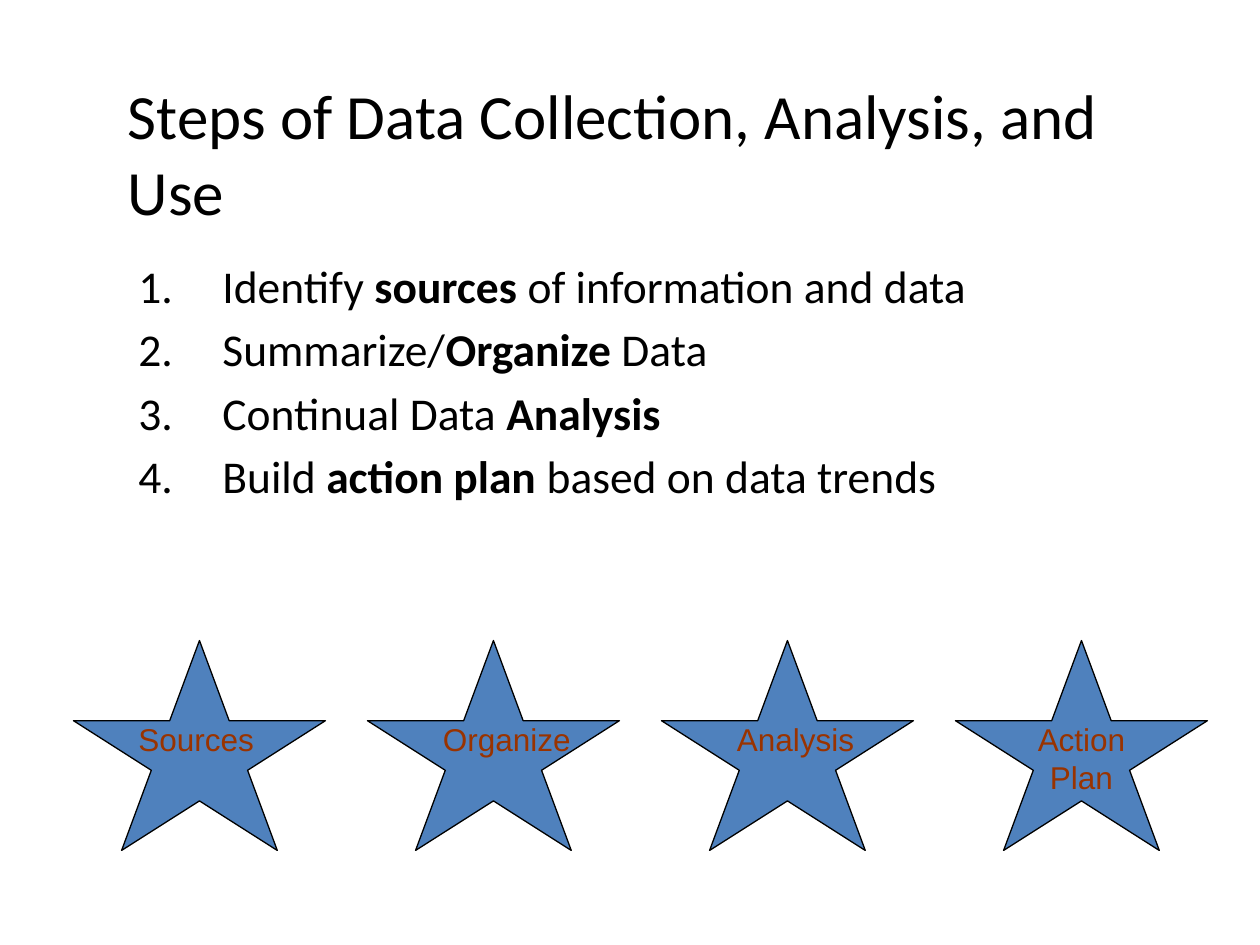
"""Build the slide on the steps of data collection, analysis, and use."""
from lxml import etree
from pptx import Presentation
from pptx import util as u
from pptx.dml.color import RGBColor
from pptx.enum import shapes, text
from pptx.oxml.ns import qn

BLACK = RGBColor(0x00, 0x00, 0x00)
BLUE = RGBColor(0x4F, 0x81, 0xBD)
RUST = RGBColor(0x99, 0x33, 0x00)


class Deck:
    heading_font = "Calibri"
    label_font = "Arial"

    def __init__(self, width, height):
        self.prs = Presentation()
        self.prs.slide_width, self.prs.slide_height = u.Pt(width), u.Pt(height)
        self.s = self.prs.slides.add_slide(self.prs.slide_layouts[6])

    def style(self, r, font, size, color, bold=False):
        r.font.name, r.font.size, r.font.bold = font, u.Pt(size), bold
        r.font.color.rgb = color

    def box(self, *bounds):
        tf = self.s.shapes.add_textbox(*map(u.Pt, bounds)).text_frame
        tf.word_wrap = True
        return tf

    def title(self, words, *bounds):
        tf = self.box(*bounds)
        tf.vertical_anchor = text.MSO_ANCHOR.MIDDLE
        tf.text = words
        self.style(tf.paragraphs[0].runs[0], self.heading_font, 36, BLACK)

    def numbered(self, items, *bounds):
        tf = self.box(*bounds)
        for i, item in enumerate(items):
            p = tf.paragraphs[0] if i == 0 else tf.add_paragraph()
            if i:
                p.space_before = u.Pt(5)
            pPr = p._p.get_or_add_pPr()
            pPr.set("marL", str(u.Pt(48)))
            pPr.set("indent", str(u.Pt(-48)))
            etree.SubElement(pPr, qn("a:buFont"), typeface="+mj-lt")
            etree.SubElement(pPr, qn("a:buAutoNum"), type="arabicPeriod")
            for j, part in enumerate(item):
                r = p.add_run()
                r.text = part
                self.style(r, self.heading_font, 26, BLACK, bold=j == 1)

    def star(self, *bounds):
        sp = self.s.shapes.add_shape(shapes.MSO_SHAPE.STAR_5_POINT, *map(u.Pt, bounds))
        sp.shadow.inherit = False
        sp.fill.solid()
        sp.fill.fore_color.rgb = BLUE
        sp.line.color.rgb = BLACK
        sp.line.width = u.Pt(0.75)

    def label(self, words, align, *bounds):
        tf = self.box(*bounds)
        tf.auto_size = text.MSO_AUTO_SIZE.SHAPE_TO_FIT_TEXT
        tf.text = words
        p = tf.paragraphs[0]
        p.alignment = align
        self.style(p.runs[0], self.label_font, 18, RUST)


def main():
    deck = Deck(720, 540)
    deck.title("Steps of Data Collection, Analysis, and Use", 66, 42, 600, 90)
    deck.numbered([
        ("Identify ", "sources", " of information and data"),
        ("Summarize/", "Organize", " Data"),
        ("Continual Data ", "Analysis"),
        ("Build ", "action plan", " based on data trends"),
    ], 72, 144, 558, 179)

    left, center = text.PP_ALIGN.LEFT, text.PP_ALIGN.CENTER
    stages = [
        ("Sources", left, 30, 84, 29),
        ("Organize", left, 36, 96, 29),
        ("Analysis", left, 36, 84, 29),
        ("Action Plan", center, 30, 84, 50),
    ]
    for i, (words, align, inset, width, height) in enumerate(stages):
        x = 42 + 168 * i
        deck.star(x, 366, 144, 120)
        deck.label(words, align, x + inset, 408, width, height)
    deck.prs.save("out.pptx")


if __name__ == "__main__":
    main()
